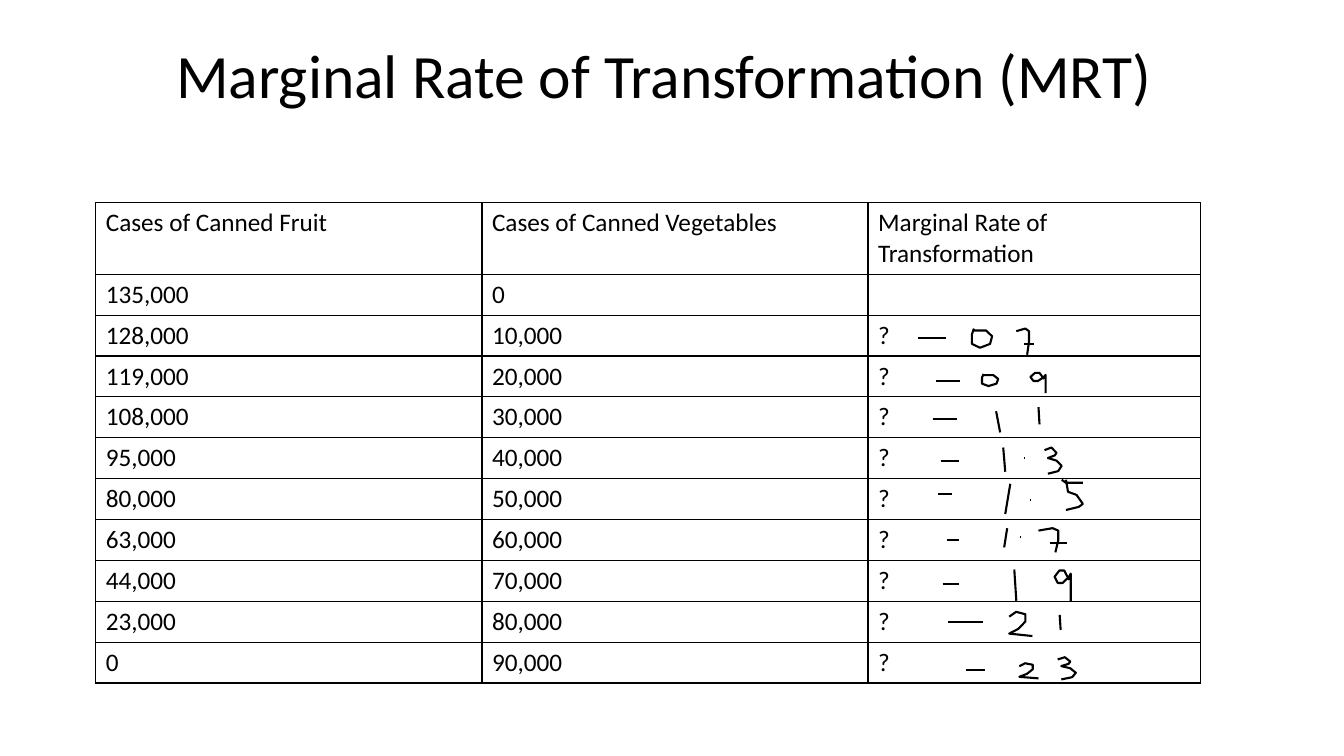
from dataclasses import dataclass

from lxml import etree
from pptx import Presentation
from pptx.dml.color import RGBColor
from pptx.enum.text import MSO_ANCHOR, PP_ALIGN
from pptx.oxml.ns import qn
from pptx.slide import Slide
from pptx.table import Table, _Cell
from pptx.text.text import TextFrame
from pptx.util import Inches, Pt

CENTER = PP_ALIGN.CENTER
MIDDLE = MSO_ANCHOR.MIDDLE
TITLE_ONLY = 5
FONT = "Calibri"
COLORS = {"ink": "000000", "paper": "FFFFFF"}

# The slide is laid out on a grid of 100 units to the inch.
UNIT = Inches(0.01)
SLIDE_SIZE = (1333, 750)
TITLE_BOX = (84, 5, 1150, 145)
TABLE_CORNER = (95, 201)
COLUMN_WIDTHS = (383, 383, 330)
ROW_HEIGHT = Pt(29.2)

TITLE = "Marginal Rate of Transformation (MRT)"
HEADINGS = ("Cases of Canned Fruit", "Cases of Canned Vegetables",
            "Marginal Rate of Transformation")
FRUIT_CASES = (135_000, 128_000, 119_000, 108_000, 95_000,
               80_000, 63_000, 44_000, 23_000, 0)
VEGETABLE_STEP = 10_000

# Pen strokes of each handwritten sign, in tenths of the box it fills.
SIGN_GRID = 10
LEVEL = (((0, 0), (10, 0)),)
SIGNS = {
    "-": LEVEL,
    ".": LEVEL,
    "1": (((0, 0), (10, 10)),),
    "/": (((10, 0), (0, 10)),),
    "0": (((1, 0), (0, 3), (0, 8), (4, 10), (9, 8), (10, 4), (7, 1), (1, 1)),),
    "2": (((0, 2), (3, 0), (7, 1), (7, 4), (4, 7), (0, 9), (10, 10)),),
    "3": (((0, 1), (4, 0), (7, 2), (6, 3), (2, 4), (7, 5), (10, 7), (8, 9), (2, 10)),),
    "5": (((2, 0), (3, 4), (7, 5), (10, 8), (8, 9), (2, 10)), ((0, 0), (2, 1), (10, 1))),
    "7": (((0, 1), (5, 0), (7, 1), (7, 5), (6, 10)), ((4, 6), (10, 6))),
    "9": (((9, 3), (6, 0), (3, 0), (0, 2), (2, 4), (5, 4), (9, 2), (10, 1), (10, 10)),),
}


@dataclass(frozen=True)
class Mark:
    """One handwritten sign and its box in grid units."""
    sign: str
    left: int
    top: int
    width: int = 1
    height: int = 0


MARKS = (
    Mark("-", 911, 335, 27), Mark("0", 964, 326, 20, 19), Mark("7", 1008, 326, 18, 26),
    Mark("-", 928, 378, 24), Mark("0", 974, 371, 16, 12), Mark("9", 1022, 370, 15, 20),
    Mark("-", 925, 416, 24), Mark("1", 988, 408, 4, 21), Mark("1", 1030, 404, 1, 17),
    Mark("-", 933, 457, 18), Mark("1", 995, 444, 2, 24), Mark(".", 1016, 454),
    Mark("3", 1036, 444, 17, 26),
    Mark("-", 930, 490, 14), Mark("/", 997, 480, 5, 30), Mark(".", 1022, 496),
    Mark("5", 1053, 476, 21, 30),
    Mark("-", 939, 536, 12), Mark("/", 996, 524, 3, 19), Mark(".", 1012, 533),
    Mark("7", 1030, 524, 28, 24),
    Mark("-", 935, 579, 16), Mark("1", 1006, 565, 2, 31), Mark("9", 1046, 566, 16, 31),
    Mark("-", 940, 617, 35), Mark("2", 1001, 607, 23, 24), Mark("1", 1051, 610, 1, 15),
    Mark("-", 958, 665, 19), Mark("2", 1011, 658, 19, 15), Mark("3", 1049, 652, 18, 22),
)


def format_runs(text_frame: TextFrame, size: int) -> None:
    for paragraph in text_frame.paragraphs:
        for run in paragraph.runs:
            run.font.name = FONT
            run.font.size = Pt(size)
            run.font.bold = False
            run.font.color.rgb = RGBColor.from_string(COLORS["ink"])


def add_title(slide: Slide) -> None:
    title = slide.shapes.title
    title.left, title.top, title.width, title.height = (
        length * UNIT for length in TITLE_BOX)
    title.text_frame.text = TITLE
    title.text_frame.vertical_anchor = MIDDLE
    title.text_frame.paragraphs[0].alignment = CENTER
    title.text_frame.paragraphs[0].line_spacing = 0.9
    format_runs(title.text_frame, 44)


def add_borders(cell: _Cell) -> None:
    properties = cell._tc.get_or_add_tcPr()
    for position, side in enumerate(("lnL", "lnR", "lnT", "lnB")):
        border = etree.Element(qn(f"a:{side}"), w=str(Pt(1)))
        fill = etree.SubElement(border, qn("a:solidFill"))
        etree.SubElement(fill, qn("a:srgbClr"), val=COLORS["ink"])
        properties.insert(position, border)


def fill_table(table: Table, rows: list[tuple[str, ...]]) -> None:
    for column, width in zip(table.columns, COLUMN_WIDTHS):
        column.width = width * UNIT
    for row, texts in zip(table.rows, rows):
        row.height = ROW_HEIGHT
        for cell, text in zip(row.cells, texts):
            cell.text_frame.text = text
            cell.fill.background()
            add_borders(cell)
            format_runs(cell.text_frame, 18)


def add_production_table(slide: Slide) -> None:
    rows = [HEADINGS]
    for step, fruit in enumerate(FRUIT_CASES):
        rows.append((f"{fruit:,}", f"{step * VEGETABLE_STEP:,}", "?" if step else ""))
    left, top = (length * UNIT for length in TABLE_CORNER)
    frame = slide.shapes.add_table(len(rows), len(HEADINGS), left, top,
                                   sum(COLUMN_WIDTHS) * UNIT, len(rows) * ROW_HEIGHT)
    frame.table.first_row = False
    frame.table.horz_banding = False
    fill_table(frame.table, rows)


def add_mark(slide: Slide, mark: Mark) -> None:
    scale = (mark.width * UNIT / SIGN_GRID, mark.height * UNIT / SIGN_GRID)
    for start, *points in SIGNS[mark.sign]:
        builder = slide.shapes.build_freeform(*start, scale=scale)
        builder.add_line_segments(points, close=False)
        stroke = builder.convert_to_shape(mark.left * UNIT, mark.top * UNIT)
        stroke.shadow.inherit = False
        stroke.fill.background()
        stroke.line.color.rgb = RGBColor.from_string(COLORS["ink"])
        stroke.line.width = Pt(1.5)


def main() -> None:
    presentation = Presentation()
    presentation.slide_width, presentation.slide_height = (
        length * UNIT for length in SLIDE_SIZE)
    slide = presentation.slides.add_slide(presentation.slide_layouts[TITLE_ONLY])
    slide.background.fill.solid()
    slide.background.fill.fore_color.rgb = RGBColor.from_string(COLORS["paper"])
    add_production_table(slide)
    add_title(slide)
    for mark in MARKS:
        add_mark(slide, mark)
    presentation.save("out.pptx")


if __name__ == "__main__":
    main()
